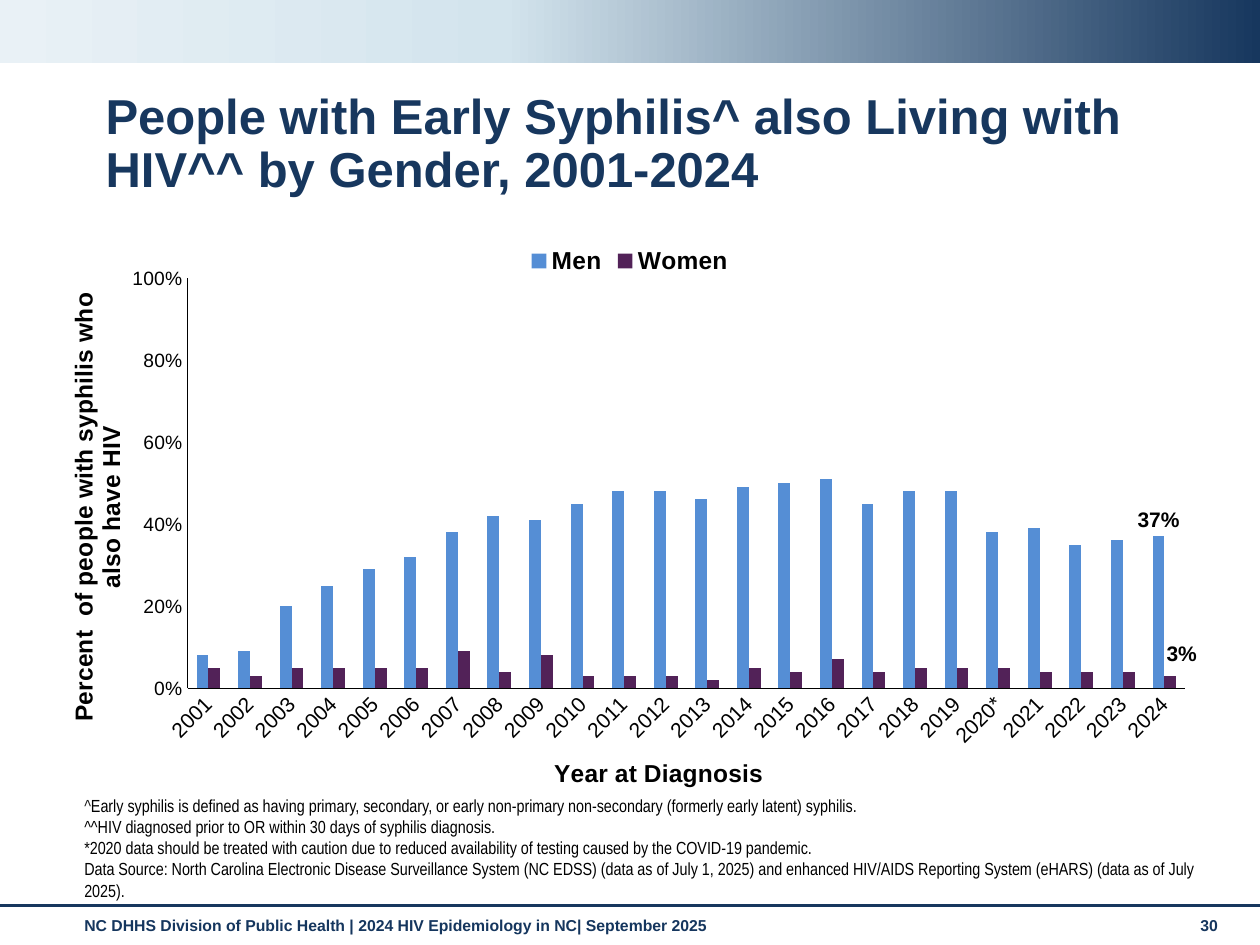
from copy import deepcopy
from dataclasses import dataclass

from lxml import etree
from pptx import Presentation
from pptx import util as u
from pptx.chart.data import CategoryChartData
from pptx.dml.color import RGBColor
from pptx.enum import chart as charts, shapes, text
from pptx.oxml import parse_xml
from pptx.oxml.ns import nsdecls, qn

COLORS = {
    "navy": "17375E", "footer": "15365E", "sky": "D3E4ED", "mist": "E9F1F6",
    "black": "000000", "caret": "1A1A1A", "men": "558ED5", "women": "522258",
}
YEARS = [f"{year}*" if year == 2020 else str(year) for year in range(2001, 2025)]


@dataclass(frozen=True)
class Passage:
    lines: tuple[str, ...]
    box: tuple[float, float, float, float]
    size: float
    color: str
    font: str = "Arial"
    bold: bool = True
    anchor: text.MSO_ANCHOR = text.MSO_ANCHOR.TOP
    spacing: float = 1.0


@dataclass(frozen=True)
class Gender:
    name: str
    percents: tuple[int, ...]
    color: str
    label_shift: tuple[float, float] = (0, 0)


TITLE = Passage(
    ("People with Early Syphilis^ also Living with HIV^^ by Gender, 2001-2024",),
    (1.88, 1.73, 23.19, 1.52), 28, "navy", spacing=0.9)
FOOTER = Passage(
    ("NC DHHS Division of Public Health | 2024 HIV Epidemiology in NC| September 2025",),
    (1.45, 18.34, 22.2, 0.74), 9, "footer")
PAGE = Passage(("30",), (23.95, 18.34, 1.12, 0.76), 9, "footer")
NOTES = Passage(
    ("Early syphilis is defined as having primary, secondary, or early non-primary "
     "non-secondary (formerly early latent) syphilis.",
     "^^HIV diagnosed prior to OR within 30 days of syphilis diagnosis.",
     "*2020 data should be treated with caution due to reduced availability of testing "
     "caused by the COVID-19 pandemic.",
     "Data Source: North Carolina Electronic Disease Surveillance System (NC EDSS) (data as of "
     "July 1, 2025) and enhanced HIV/AIDS Reporting System (eHARS) (data as of July 2025)."),
    (1.45, 17.75, 23.6, 0.53), 10, "black", "Arial Narrow", False, text.MSO_ANCHOR.BOTTOM)
GENDERS = (
    Gender("Men", (8, 9, 20, 25, 29, 32, 38, 42, 41, 45, 48, 48,
                   46, 49, 50, 51, 45, 48, 48, 38, 39, 35, 36, 37), "men"),
    Gender("Women", (5, 3, 5, 5, 5, 5, 9, 4, 8, 3, 3, 3,
                     2, 5, 4, 7, 4, 5, 5, 5, 4, 4, 4, 3), "women", (0.01, -0.01)),
)


def rgb(name: str) -> RGBColor:
    """Return a named colour."""
    return RGBColor.from_string(COLORS[name])


def style_font(font, size: float, color: str, bold: bool, name: str = "Arial") -> None:
    """Set face, size, weight and colour of a font."""
    font.name, font.size, font.bold = name, u.Pt(size), bold
    font.color.rgb = rgb(color)


def draw_passage(slide, passage: Passage):
    """Draw a wrapped text box and return its text frame."""
    frame = slide.shapes.add_textbox(*map(u.Cm, passage.box)).text_frame
    frame.word_wrap = True
    frame.vertical_anchor = passage.anchor
    frame.text = "\n".join(passage.lines)
    for paragraph in frame.paragraphs:
        paragraph.line_spacing = passage.spacing
        style_font(paragraph.font, passage.size, passage.color, passage.bold, passage.font)
    return frame


def draw_notes(slide) -> None:
    """Draw the footnotes with the grey caret before the first one."""
    opening = draw_passage(slide, NOTES).paragraphs[0]
    definition = opening.runs[0]
    caret = opening.add_run()
    caret.text = "^"
    caret.font.color.rgb = rgb("caret")
    definition._r.addprevious(caret._r)


def draw_band(slide) -> None:
    """Draw the gradient band across the top."""
    band = slide.shapes.add_shape(
        shapes.MSO_SHAPE.RECTANGLE, 0, 0, u.Cm(25.4), u.Cm(1.27))
    band.shadow.inherit = False
    band.line.fill.background()
    band.fill.gradient()
    band.fill.gradient_angle = 180
    stops = band._element.spPr.find(".//" + qn("a:gsLst"))
    stops.append(deepcopy(stops[0]))
    for stop, position, color in zip(
            band.fill.gradient_stops, (0, 0.6, 1), ("navy", "sky", "mist")):
        stop.position = position
        stop.color.rgb = rgb(color)


def draw_rule(slide) -> None:
    """Draw the line above the footer."""
    rule = slide.shapes.add_connector(
        shapes.MSO_CONNECTOR.STRAIGHT, 0, u.Cm(18.26), u.Cm(25.4), u.Cm(18.26))
    rule.line.color.rgb = rgb("navy")
    rule.line.width = u.Pt(1.75)
    etree.SubElement(rule._element.spPr, qn("a:effectLst"))


def manual_layout(**parts: object):
    """Build a chart layout element from its parts in schema order."""
    inside = "".join(f'<c:{key} val="{value}"/>' for key, value in parts.items())
    return parse_xml(
        f'<c:layout {nsdecls("c")}><c:manualLayout>{inside}</c:manualLayout></c:layout>')


def style_axis(axis, title: str, tick_size: float) -> None:
    """Give an axis its title, thin line and plain tick labels."""
    axis.has_major_gridlines = False
    axis.major_tick_mark = axis.minor_tick_mark = charts.XL_TICK_MARK.NONE
    axis.format.line.color.rgb = rgb("black")
    axis.format.line.width = u.Pt(0.25)
    style_font(axis.tick_labels.font, tick_size, "black", False)
    axis.axis_title.text_frame.text = title
    style_font(axis.axis_title.text_frame.paragraphs[0].font, 14, "black", True)


def style_series(series, gender: Gender) -> None:
    """Colour a series and label its last year only."""
    series.format.fill.solid()
    series.format.fill.fore_color.rgb = rgb(gender.color)
    series.data_labels.show_value = False
    label = series.points[len(YEARS) - 1].data_label
    style_font(label.font, 12, "black", True)
    label.position = charts.XL_LABEL_POSITION.OUTSIDE_END
    if any(gender.label_shift):
        x, y = gender.label_shift
        index = series._element.find(".//" + qn("c:dLbl")).find(qn("c:idx"))
        index.addnext(manual_layout(x=x, y=y))


def draw_chart(slide) -> None:
    """Draw the column chart of percents by gender and year."""
    data = CategoryChartData(number_format="0%")
    data.categories = YEARS
    for gender in GENDERS:
        data.add_series(gender.name, [percent / 100 for percent in gender.percents])
    chart = slide.shapes.add_chart(
        charts.XL_CHART_TYPE.COLUMN_CLUSTERED,
        *map(u.Cm, (1.27, 4.7, 22.86, 11.33)), data).chart
    style_font(chart.font, 12, "black", True)
    chart.has_title = False
    chart.has_legend = True
    chart.legend.position = charts.XL_LEGEND_POSITION.TOP
    chart.legend.include_in_layout = False
    style_font(chart.legend.font, 14, "black", True)

    style_axis(chart.category_axis, "Year at Diagnosis", 12)
    percent_axis = chart.value_axis
    style_axis(percent_axis, "Percent  of people with syphilis who also have HIV", 11)
    percent_axis.minimum_scale, percent_axis.maximum_scale = 0, 1
    percent_axis.major_unit = 0.2
    percent_axis.tick_labels.number_format = "0%"
    percent_axis.tick_labels.number_format_is_linked = False

    columns = chart.plots[0]
    columns.gap_width, columns.overlap = 150, 0
    columns.vary_by_categories = False
    for series, gender in zip(columns.series, GENDERS):
        style_series(series, gender)

    area = chart._chartSpace.chart.plotArea
    for layout in area.findall(qn("c:layout")):
        area.remove(layout)
    area.insert(0, manual_layout(
        layoutTarget="inner", xMode="edge", yMode="edge", x=0.11, y=0.08, w=0.88, h=0.73))


def main() -> None:
    """Build the slide and save it."""
    deck = Presentation()
    deck.slide_width, deck.slide_height = u.Cm(25.4), u.Cm(19.05)
    slide = deck.slides.add_slide(deck.slide_layouts[6])
    draw_passage(slide, FOOTER)
    draw_passage(slide, PAGE)
    draw_band(slide)
    draw_rule(slide)
    draw_passage(slide, TITLE)
    draw_notes(slide)
    draw_chart(slide)
    deck.save("out.pptx")


if __name__ == "__main__":
    main()
